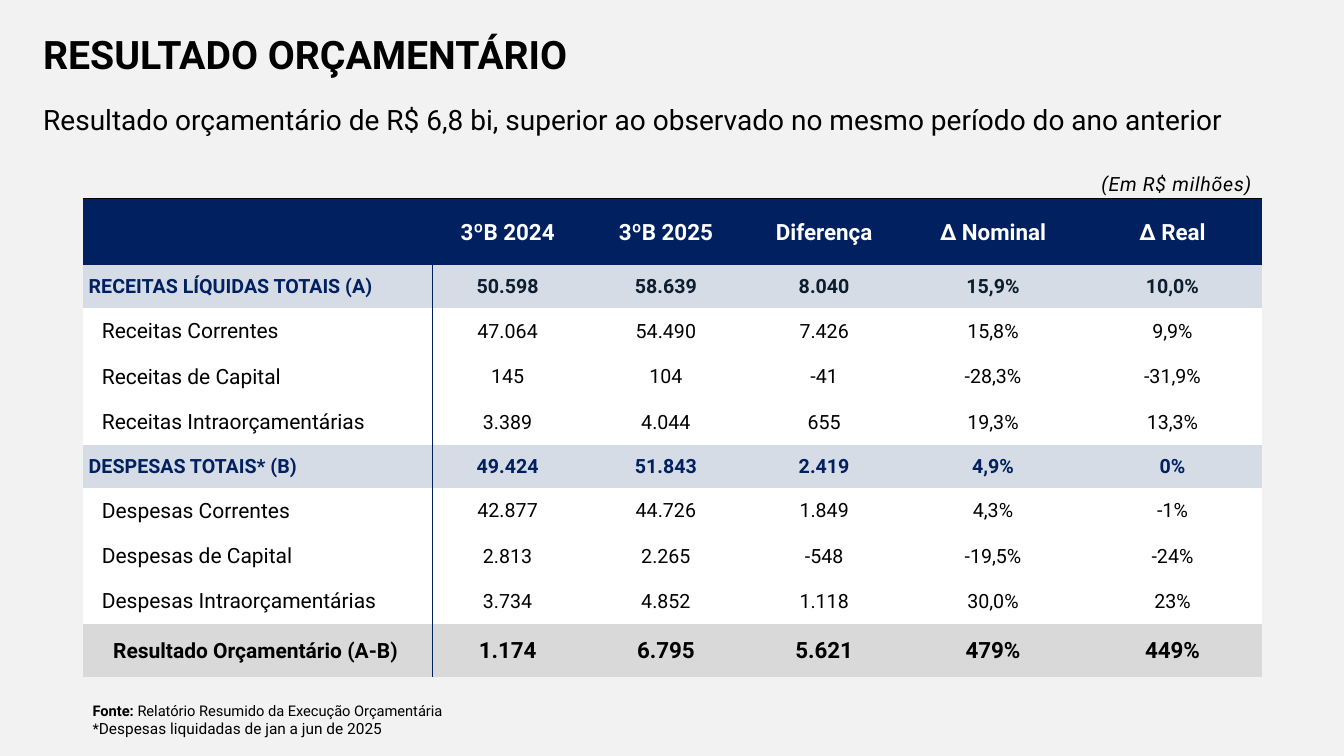
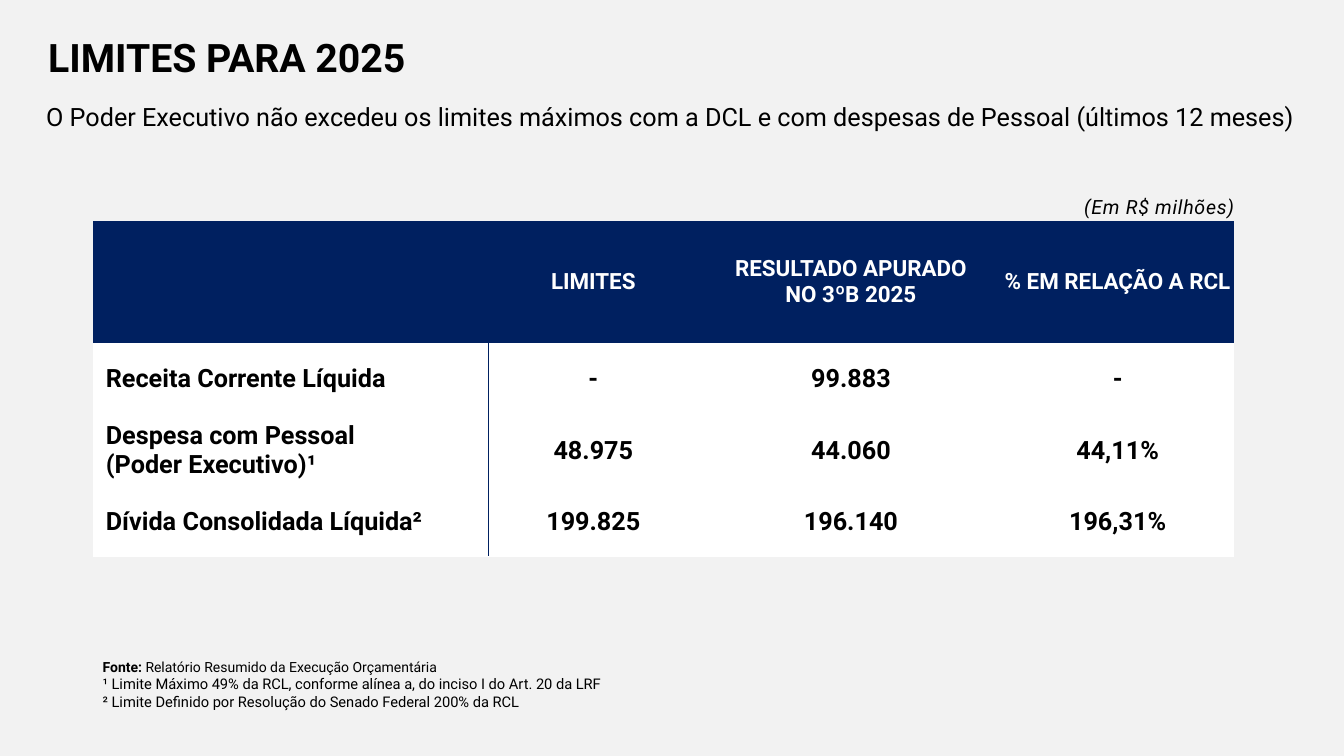
from lxml import etree
from pptx import Presentation
from pptx.dml.color import RGBColor
from pptx.enum import shapes, text
from pptx.oxml import ns
from pptx.util import Inches, Pt

FONT = "Roboto"
BLACK = RGBColor(0x00, 0x00, 0x00)
WHITE = RGBColor(0xFF, 0xFF, 0xFF)
NAVY = RGBColor(0x00, 0x20, 0x60)
INK = RGBColor(0x0B, 0x1D, 0x2F)
PALE_BLUE = RGBColor(0xD6, 0xDC, 0xE5)
PALE_GREY = RGBColor(0xF2, 0xF2, 0xF2)
GREY = RGBColor(0xD9, 0xD9, 0xD9)
LEFT, CENTER, RIGHT = text.PP_ALIGN.LEFT, text.PP_ALIGN.CENTER, text.PP_ALIGN.RIGHT
TOP, MIDDLE = text.MSO_ANCHOR.TOP, text.MSO_ANCHOR.MIDDLE
NO_GRID_STYLE = "{2D5ABB26-0587-4C30-8999-92F81FD0307C}"


def write_text(frame, lines, size=14, color=BLACK, bold=False, italic=False,
               align=LEFT, line_spacing=None, tracking=None):
    """Each line is a string or a list of (text, size, bold) runs."""
    for index, line in enumerate(lines):
        paragraph = frame.paragraphs[0] if index == 0 else frame.add_paragraph()
        paragraph.alignment = align
        if line_spacing:
            paragraph.line_spacing = line_spacing
        runs = [(line, size, bold)] if isinstance(line, str) else line
        for words, run_size, run_bold in runs:
            run = paragraph.add_run()
            run.text = words
            font = run.font
            font.name, font.size, font.color.rgb = FONT, Pt(run_size), color
            font.bold, font.italic = run_bold, italic
            if tracking:
                font._element.set("spc", str(int(tracking * 100)))


class Deck:
    def __init__(self):
        self.prs = Presentation()
        self.prs.slide_width, self.prs.slide_height = Inches(13.33), Inches(7.5)
        self.slide = None

    def new_slide(self):
        self.slide = self.prs.slides.add_slide(self.prs.slide_layouts[6])
        background = self.slide.background.fill
        background.solid()
        background.fore_color.rgb = PALE_GREY

    def text_box(self, box, lines, anchor=TOP, **style):
        frame = self.slide.shapes.add_textbox(*map(Inches, box)).text_frame
        frame.word_wrap = True
        frame.vertical_anchor = anchor
        write_text(frame, lines, **style)

    def title(self, words, box):
        self.text_box(box, [words], MIDDLE, size=28, bold=True, line_spacing=0.9)

    def subtitle(self, words, box, size):
        self.text_box(box, [words], MIDDLE, size=size, line_spacing=1.2)

    def unit_label(self, left, top):
        self.text_box((left, top, 2.09, 0.42), ["(Em R$ milhões)"], italic=True,
                      align=RIGHT, line_spacing=1.2, tracking=0.5)

    def source_note(self, box, size, *notes):
        source = [("Fonte: ", size, True),
                  ("Relatório Resumido da Execução Orçamentária", size, False)]
        self.text_box(box, [source, *notes], size=10.5)

    def table(self, left, top, widths, heights):
        frame = self.slide.shapes.add_table(
            len(heights), len(widths), Inches(left), Inches(top),
            Inches(sum(widths)), Inches(sum(heights)))
        table = frame.table
        table.first_row = table.horz_banding = False
        table._tbl.tblPr.find(ns.qn("a:tableStyleId")).text = NO_GRID_STYLE
        for column, width in zip(table.columns, widths):
            column.width = Inches(width)
        for row, height in zip(table.rows, heights):
            row.height = Inches(height)
        return table

    def fill_row(self, row, values, fill, label=None, indent=0.01, **style):
        """The label style overrides the row style in the first column."""
        for index, (cell, value) in enumerate(zip(row.cells, values)):
            cell.fill.solid()
            cell.fill.fore_color.rgb = fill
            cell.vertical_anchor = MIDDLE
            cell.margin_left = Inches(0.01 if index else indent)
            cell.margin_top = cell.margin_right = Inches(0.01)
            cell.margin_bottom = 0
            cell_style = {"align": CENTER, **style}
            if index == 0:
                cell_style.update(label or {})
            if value:
                write_text(cell.text_frame, value.split("\n"), **cell_style)

    def header_row(self, table, values):
        self.fill_row(table.rows[0], values, NAVY, size=16, color=WHITE, bold=True)

    def top_border(self, row):
        for cell in row.cells:
            border = etree.Element(ns.qn("a:lnT"), w=str(Pt(0.5)))
            solid = etree.SubElement(border, ns.qn("a:solidFill"))
            etree.SubElement(solid, ns.qn("a:srgbClr"), val=str(BLACK))
            cell._tc.get_or_add_tcPr().insert(0, border)

    def divider(self, x, top, bottom, width):
        line = self.slide.shapes.add_connector(
            shapes.MSO_CONNECTOR.STRAIGHT, *map(Inches, (x, top, x, bottom)))
        line.line.color.rgb = NAVY
        line.line.width = Pt(width)
        etree.SubElement(line._element.spPr, ns.qn("a:effectLst"))


def budget_slide(deck):
    deck.new_slide()
    deck.title("RESULTADO ORÇAMENTÁRIO", (0.33, 0.17, 10.55, 0.79))
    deck.subtitle("Resultado orçamentário de R$ 6,8 bi, superior ao observado "
                  "no mesmo período do ano anterior", (0.33, 0.89, 12.68, 0.53), 20)
    deck.unit_label(10.42, 1.61)
    deck.source_note((0.82, 6.91, 4.74, 0.55), 10.5,
                     [("*", 10.5, False),
                      ("Despesas liquidadas de jan a jun de 2025", 11, False)])

    # Row kinds: group heading, item and final result
    revenue = dict(fill=PALE_BLUE, color=INK, bold=True, indent=0.06,
                   label=dict(color=NAVY, align=LEFT))
    expense = {**revenue, "color": NAVY}
    item = dict(fill=WHITE, indent=0.19, label=dict(size=15, align=LEFT))
    result = dict(fill=GREY, size=16, bold=True, label=dict(size=15))
    rows = [
        (revenue, ["RECEITAS LÍQUIDAS TOTAIS (A)", "50.598", "58.639", "8.040", "15,9%", "10,0%"]),
        (item, ["Receitas Correntes", "47.064", "54.490", "7.426", "15,8%", "9,9%"]),
        (item, ["Receitas de Capital", "145", "104", "-41", "-28,3%", "-31,9%"]),
        (item, ["Receitas Intraorçamentárias", "3.389", "4.044", "655", "19,3%", "13,3%"]),
        (expense, ["DESPESAS TOTAIS* (B)", "49.424", "51.843", "2.419", "4,9%", "0%"]),
        (item, ["Despesas Correntes", "42.877", "44.726", "1.849", "4,3%", "-1%"]),
        (item, ["Despesas de Capital", "2.813", "2.265", "-548", "-19,5%", "-24%"]),
        (item, ["Despesas Intraorçamentárias", "3.734", "4.852", "1.118", "30,0%", "23%"]),
        (result, ["Resultado Orçamentário (A-B)", "1.174", "6.795", "5.621", "479%", "449%"]),
    ]
    group_heights = [0.43] + [0.45] * 3
    budget = deck.table(0.82, 1.97, [3.43] + [1.57] * 3 + [1.78] * 2,
                        [0.66] + group_heights * 2 + [0.53])
    deck.header_row(budget, ["", "3ºB 2024", "3ºB 2025", "Diferença", "∆ Nominal", "∆ Real"])
    deck.top_border(budget.rows[0])
    for index, (style, values) in enumerate(rows, start=1):
        deck.fill_row(budget.rows[index], values, **style)
    deck.divider(4.29, 2.41, 6.72, 0.75)


def limits_slide(deck):
    deck.new_slide()
    deck.subtitle("O Poder Executivo não excedeu os limites máximos com a DCL e com "
                  "despesas de Pessoal (últimos 12 meses)", (0.36, 0.83, 12.6, 0.59), 18)
    deck.title("LIMITES PARA 2025", (0.38, 0.2, 7.85, 0.79))
    deck.source_note((0.92, 6.48, 7.74, 0.62), 10,
                     "¹ Limite Máximo 49% da RCL, conforme alínea a, do inciso I do Art. 20 da LRF",
                     "² Limite Definido por Resolução do Senado Federal 200% da RCL")

    # Limits table
    rows = [
        ["Receita Corrente Líquida", "-", "99.883", "-"],
        ["Despesa com Pessoal\n(Poder Executivo)¹", "48.975", "44.060", "44,11%"],
        ["Dívida Consolidada Líquida²", "199.825", "196.140", "196,31%"],
    ]
    limits = deck.table(0.92, 2.19, [3.9, 2.13, 2.98, 2.31], [1.21] + [0.71] * 3)
    deck.header_row(limits, ["", "LIMITES", "RESULTADO APURADO\nNO 3ºB 2025",
                             "% EM RELAÇÃO A RCL"])
    for index, values in enumerate(rows, start=1):
        deck.fill_row(limits.rows[index], values, WHITE, size=18, bold=True,
                      indent=0.13, label=dict(align=LEFT))
    deck.unit_label(10.25, 1.84)
    deck.divider(4.84, 3.32, 5.52, 0.5)


def main():
    deck = Deck()
    budget_slide(deck)
    limits_slide(deck)
    deck.prs.save("out.pptx")


if __name__ == "__main__":
    main()
